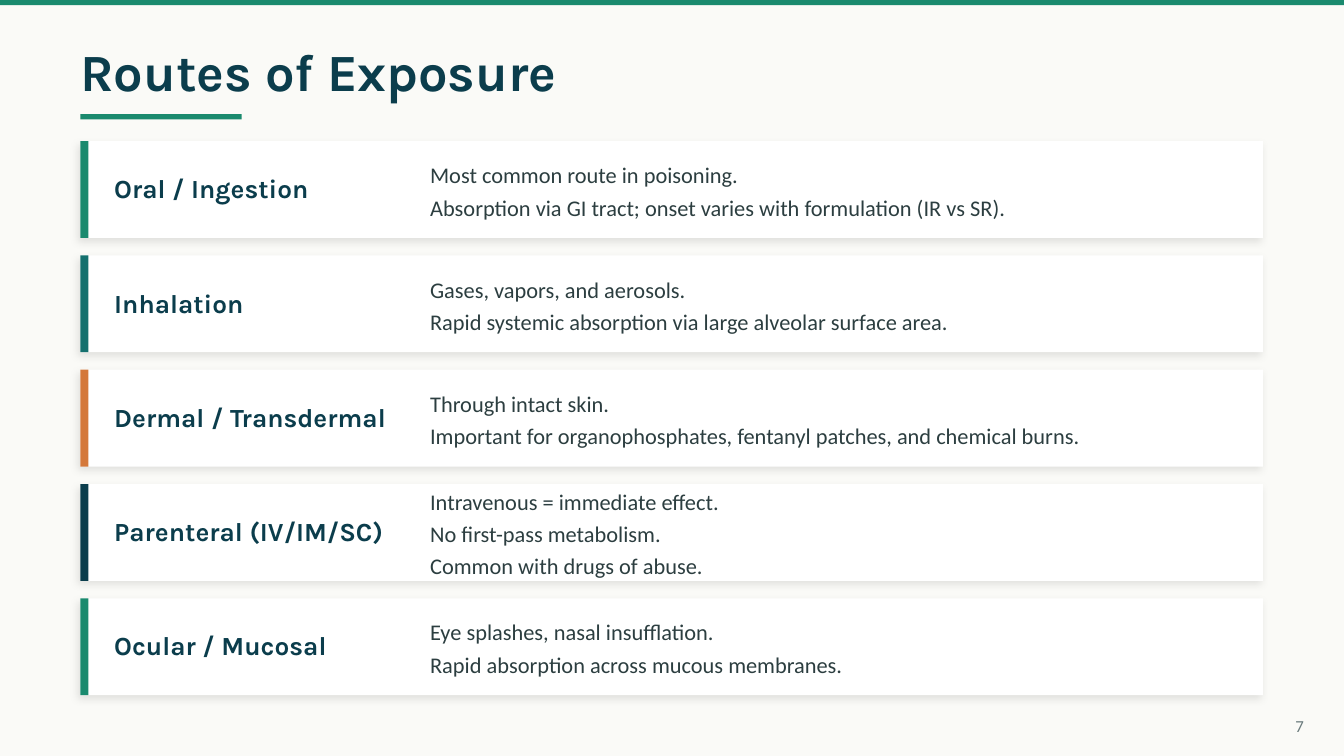
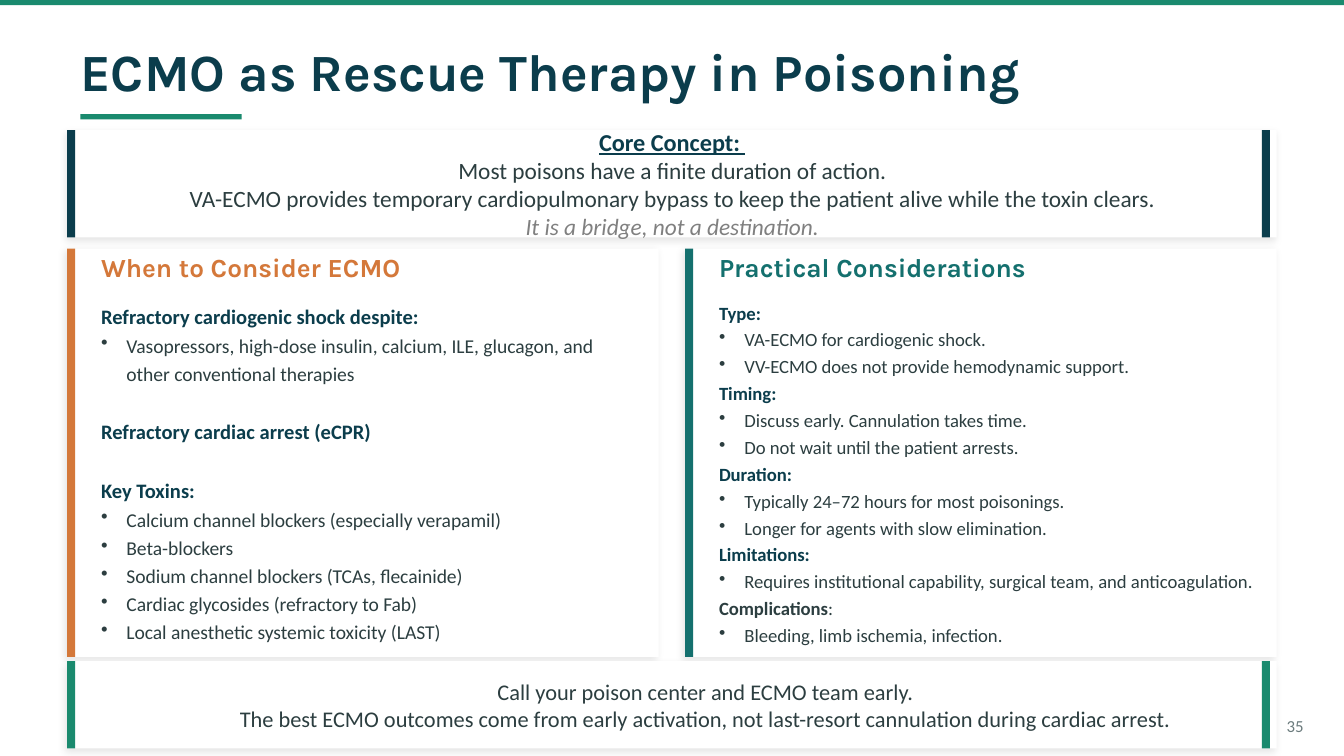
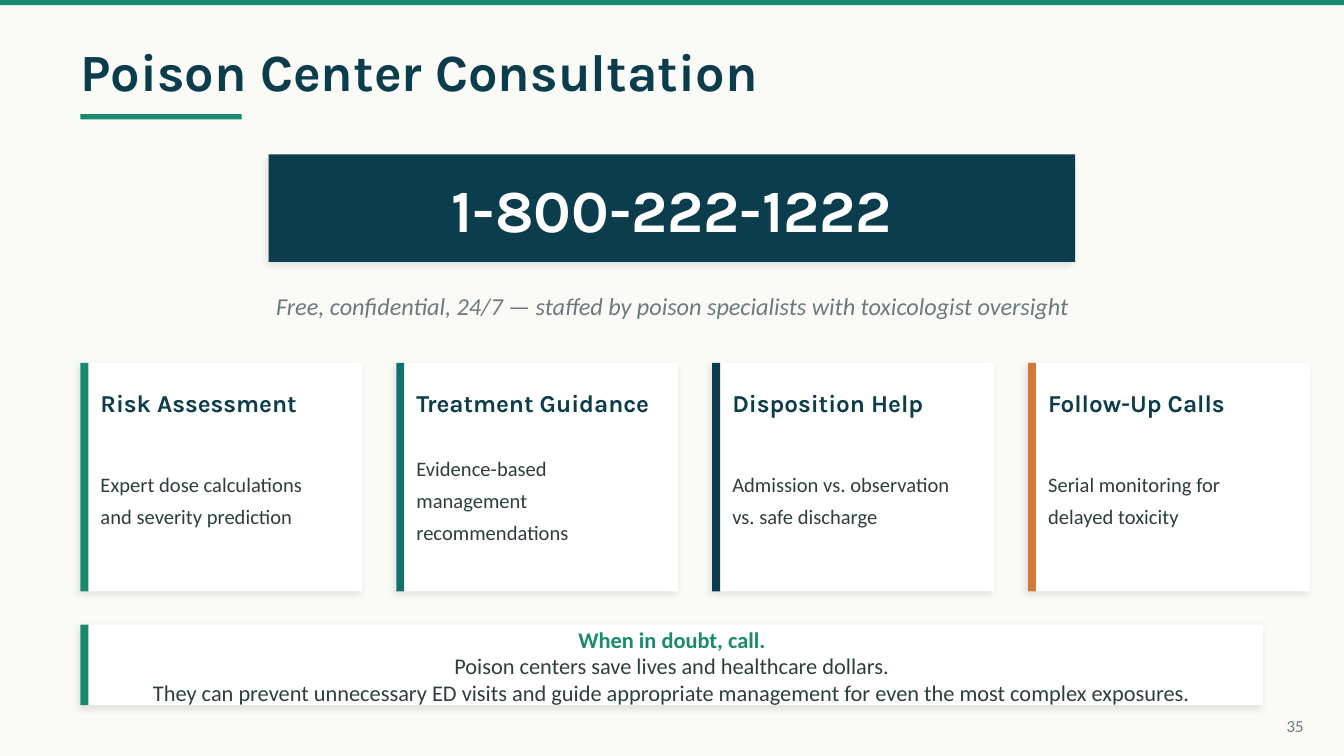
from dataclasses import dataclass

from lxml.etree import SubElement
from pptx import Presentation
from pptx.dml.color import RGBColor
from pptx.enum.shapes import MSO_SHAPE
from pptx.enum.text import MSO_ANCHOR, PP_ALIGN
from pptx.oxml.ns import qn
from pptx.util import Cm, Pt


@dataclass(frozen=True)
class Theme:
    paper: str = "FAFAF7"
    white: str = "FFFFFF"
    green: str = "1A8A6E"
    teal: str = "14706E"
    navy: str = "0B3D4C"
    orange: str = "D4783A"
    ink: str = "2C3E40"
    muted: str = "6B7B7D"
    gray: str = "808080"
    heading_font: str = "Karla"
    body_font: str = "Calibri"
    phone_size: float = 32
    title_size: float = 28
    panel_size: float = 14
    card_size: float = 13
    concept_size: float = 12.5
    body_size: float = 12
    detail_size: float = 11
    bullet_size: float = 10.5
    compact_size: float = 10
    number_size: float = 9


THEME = Theme()
MARGIN = 1.52
CONTENT_WIDTH = 22.35
ACCENT_WIDTH = 0.15
BULLET_INDENT = 0.48


def body(size, color=THEME.ink, **extra):
    return {"name": THEME.body_font, "size": Pt(size), "color": color, **extra}


def heading(size, color=THEME.navy):
    return {"name": THEME.heading_font, "size": Pt(size), "color": color, "bold": True}


@dataclass(frozen=True)
class Line:
    """One paragraph: (text, format) runs, an optional bullet and points of space before."""
    runs: tuple
    bullet: bool = False
    gap: float = 0


def lines(texts, style, bullet=False):
    return [Line(((text, style),), bullet) for text in texts]


def topic(title, points, title_style, point_style, gap=0):
    """A bold lead line followed by its bullets."""
    return [Line(((title, title_style),), gap=gap), *lines(points, point_style, True)]


def add_block(slide, left, top, width, height, color, raised=False):
    block = slide.shapes.add_shape(
        MSO_SHAPE.RECTANGLE, Cm(left), Cm(top), Cm(width), Cm(height))
    block.fill.solid()
    block.fill.fore_color.rgb = RGBColor.from_string(color)
    block.line.fill.background()
    block.shadow.inherit = False
    if raised:
        effects = block._element.spPr.find(qn("a:effectLst"))
        shadow = SubElement(effects, qn("a:outerShdw"), blurRad=str(Pt(4)),
                            dist=str(Pt(2)), dir="8100000", rotWithShape="0")
        shade = SubElement(shadow, qn("a:srgbClr"), val="000000")
        SubElement(shade, qn("a:alpha"), val="10000")


def add_card(slide, left, top, width, height, accent):
    add_block(slide, left, top, width, height, THEME.white, raised=True)
    add_block(slide, left, top, ACCENT_WIDTH, height, accent)


def add_bullet(paragraph):
    properties = paragraph._p.get_or_add_pPr()
    properties.set("marL", str(Cm(BULLET_INDENT)))
    properties.set("indent", str(-Cm(BULLET_INDENT)))
    SubElement(properties, qn("a:buChar"), char="•")


def apply_format(font, style):
    for attribute, value in style.items():
        if attribute == "color":
            font.color.rgb = RGBColor.from_string(value)
        else:
            setattr(font, attribute, value)


def add_text(slide, left, top, width, height, content, align=PP_ALIGN.LEFT, spacing=None):
    frame = slide.shapes.add_textbox(
        Cm(left), Cm(top), Cm(width), Cm(height)).text_frame
    frame_format = {"word_wrap": True, "vertical_anchor": MSO_ANCHOR.MIDDLE,
                    "margin_left": 0, "margin_right": 0,
                    "margin_top": 0, "margin_bottom": 0}
    for attribute, value in frame_format.items():
        setattr(frame, attribute, value)
    for index, line in enumerate(content):
        paragraph = frame.add_paragraph() if index else frame.paragraphs[0]
        paragraph.alignment = align
        if spacing:
            paragraph.line_spacing = spacing
        if line.gap:
            paragraph.space_before = Pt(line.gap)
        if line.bullet:
            add_bullet(paragraph)
        for text, style in line.runs:
            run = paragraph.add_run()
            run.text = text
            apply_format(run.font, style)


def start_slide(deck, title, number, background=THEME.paper):
    """Add a slide with the shared top band, title, underline and page number."""
    slide = deck.slides.add_slide(deck.slide_layouts[6])
    slide.background.fill.solid()
    slide.background.fill.fore_color.rgb = RGBColor.from_string(background)
    add_block(slide, 0, 0, 25.4, 0.1, THEME.green)
    add_text(slide, MARGIN, 0.64, CONTENT_WIDTH, 1.4,
             lines([title], heading(THEME.title_size)))
    add_block(slide, MARGIN, 2.16, 3.05, 0.1, THEME.green)
    add_text(slide, 23.37, 13.34, 1.27, 0.76,
             lines([number], body(THEME.number_size, THEME.muted)), PP_ALIGN.RIGHT)
    return slide


def build_routes(deck):
    slide = start_slide(deck, "Routes of Exposure", "7")
    routes = [
        ("Oral / Ingestion", THEME.green,
         ["Most common route in poisoning.",
          "Absorption via GI tract; onset varies with formulation (IR vs SR)."]),
        ("Inhalation", THEME.teal,
         ["Gases, vapors, and aerosols.",
          "Rapid systemic absorption via large alveolar surface area."]),
        ("Dermal / Transdermal", THEME.orange,
         ["Through intact skin.",
          "Important for organophosphates, fentanyl patches, and chemical burns."]),
        ("Parenteral (IV/IM/SC)", THEME.navy,
         ["Intravenous = immediate effect.",
          "No first-pass metabolism.",
          "Common with drugs of abuse."]),
        ("Ocular / Mucosal", THEME.green,
         ["Eye splashes, nasal insufflation.",
          "Rapid absorption across mucous membranes."]),
    ]
    for row, (route, accent, facts) in enumerate(routes):
        top = 2.67 + row * 2.16
        add_card(slide, MARGIN, top, CONTENT_WIDTH, 1.83, accent)
        add_text(slide, 2.16, top + 0.13, 5.84, 1.52,
                 lines([route], heading(THEME.panel_size)))
        add_text(slide, 8.13, top + 0.13, 15.24, 1.52,
                 lines(facts, body(THEME.body_size)), spacing=1.2)


def add_banner(slide, top, height, accent):
    """A full-width card with an accent at both ends."""
    add_card(slide, 1.27, top, 22.86, height, accent)
    add_block(slide, 23.85, top, ACCENT_WIDTH, height, accent)


def add_panel(slide, left, title, accent, content, body_width):
    add_card(slide, left, 4.7, 11.18, 7.72, accent)
    add_text(slide, left + 0.64, 4.6, 9.91, 0.89,
             lines([title], heading(THEME.panel_size, accent)))
    add_text(slide, left + 0.64, 5.44, body_width, 6.95, content, spacing=1.2)


def build_ecmo(deck):
    slide = start_slide(deck, "ECMO as Rescue Therapy in Poisoning", "35", THEME.white)

    add_banner(slide, 2.46, 2.03, THEME.navy)
    concept = [
        *lines(["Core Concept: "],
               body(THEME.card_size, THEME.navy, bold=True, underline=True)),
        *lines(["Most poisons have a finite duration of action.",
                "VA-ECMO provides temporary cardiopulmonary bypass to keep the patient "
                "alive while the toxin clears."], body(THEME.concept_size)),
        *lines(["It is a bridge, not a destination."],
               body(THEME.concept_size, THEME.gray, italic=True)),
    ]
    add_text(slide, 1.91, 2.49, 21.59, 1.98, concept, PP_ALIGN.CENTER)

    lead = body(THEME.detail_size, THEME.navy, bold=True)
    point = body(THEME.bullet_size)
    indications = [
        *topic("Refractory cardiogenic shock despite:",
               ["Vasopressors, high-dose insulin, calcium, ILE, glucagon, and other "
                "conventional therapies"], lead, point),
        *topic("Refractory cardiac arrest (eCPR)", [], lead, point, gap=15.4),
        *topic("Key Toxins:",
               ["Calcium channel blockers (especially verapamil)",
                "Beta-blockers",
                "Sodium channel blockers (TCAs, flecainide)",
                "Cardiac glycosides (refractory to Fab)",
                "Local anesthetic systemic toxicity (LAST)"], lead, point, gap=16),
    ]
    add_panel(slide, 1.27, "When to Consider ECMO", THEME.orange, indications, 9.91)

    lead = body(THEME.compact_size, THEME.navy, bold=True)
    point = body(THEME.compact_size)
    topics = [
        ("Type:", ["VA-ECMO for cardiogenic shock.",
                   "VV-ECMO does not provide hemodynamic support."]),
        ("Timing:", ["Discuss early. Cannulation takes time.",
                     "Do not wait until the patient arrests."]),
        ("Duration:", ["Typically 24–72 hours for most poisonings.",
                       "Longer for agents with slow elimination."]),
        ("Limitations:", ["Requires institutional capability, surgical team, and "
                          "anticoagulation."]),
    ]
    considerations = [line for title, points in topics
                      for line in topic(title, points, lead, point)]
    considerations += [
        Line((("Complications", {**point, "bold": True}), (":", point))),
        *lines(["Bleeding, limb ischemia, infection."], point, True),
    ]
    add_panel(slide, 12.95, "Practical Considerations", THEME.teal, considerations, 10.29)

    add_banner(slide, 12.5, 1.65, THEME.green)
    add_text(slide, 3.05, 12.57, 20.57, 1.52,
             lines(["Call your poison center and ECMO team early.",
                    "The best ECMO outcomes come from early activation, not last-resort "
                    "cannulation during cardiac arrest."], body(THEME.body_size)),
             PP_ALIGN.CENTER)


def build_consultation(deck):
    slide = start_slide(deck, "Poison Center Consultation", "35")

    hotline = (5.08, 2.92, 15.24, 2.03)
    add_block(slide, *hotline, THEME.navy, raised=True)
    add_text(slide, *hotline,
             lines(["1-800-222-1222"], heading(THEME.phone_size, THEME.white)),
             PP_ALIGN.CENTER)
    add_text(slide, 2.54, 5.33, 20.32, 0.89,
             lines(["Free, confidential, 24/7 — staffed by poison specialists with "
                    "toxicologist oversight"],
                   body(THEME.card_size, THEME.muted, italic=True)),
             PP_ALIGN.CENTER)

    services = [
        ("Risk Assessment", THEME.green,
         ["Expert dose calculations", "and severity prediction"]),
        ("Treatment Guidance", THEME.teal,
         ["Evidence-based management", "recommendations"]),
        ("Disposition Help", THEME.navy,
         ["Admission vs. observation", "vs. safe discharge"]),
        ("Follow-Up Calls", THEME.orange,
         ["Serial monitoring for", "delayed toxicity"]),
    ]
    for column, (service, accent, description) in enumerate(services):
        left = MARGIN + column * 5.97
        add_card(slide, left, 6.86, 5.33, 4.32, accent)
        add_text(slide, left + 0.38, 7.11, 4.57, 1.02,
                 lines([service], heading(THEME.card_size)))
        add_text(slide, left + 0.38, 8.38, 4.57, 2.03,
                 lines(description, body(THEME.detail_size)), spacing=1.3)

    add_card(slide, MARGIN, 11.81, CONTENT_WIDTH, 1.52, THEME.green)
    advice = [
        *lines(["When in doubt, call."], body(THEME.body_size, THEME.green, bold=True)),
        *lines(["Poison centers save lives and healthcare dollars.",
                "They can prevent unnecessary ED visits and guide appropriate management "
                "for even the most complex exposures."], body(THEME.body_size)),
    ]
    add_text(slide, 2.16, 11.89, 21.08, 1.4, advice, PP_ALIGN.CENTER)


def main():
    deck = Presentation()
    deck.slide_width = Cm(25.4)
    deck.slide_height = Cm(14.29)
    build_routes(deck)
    build_ecmo(deck)
    build_consultation(deck)
    deck.save("out.pptx")


if __name__ == "__main__":
    main()
